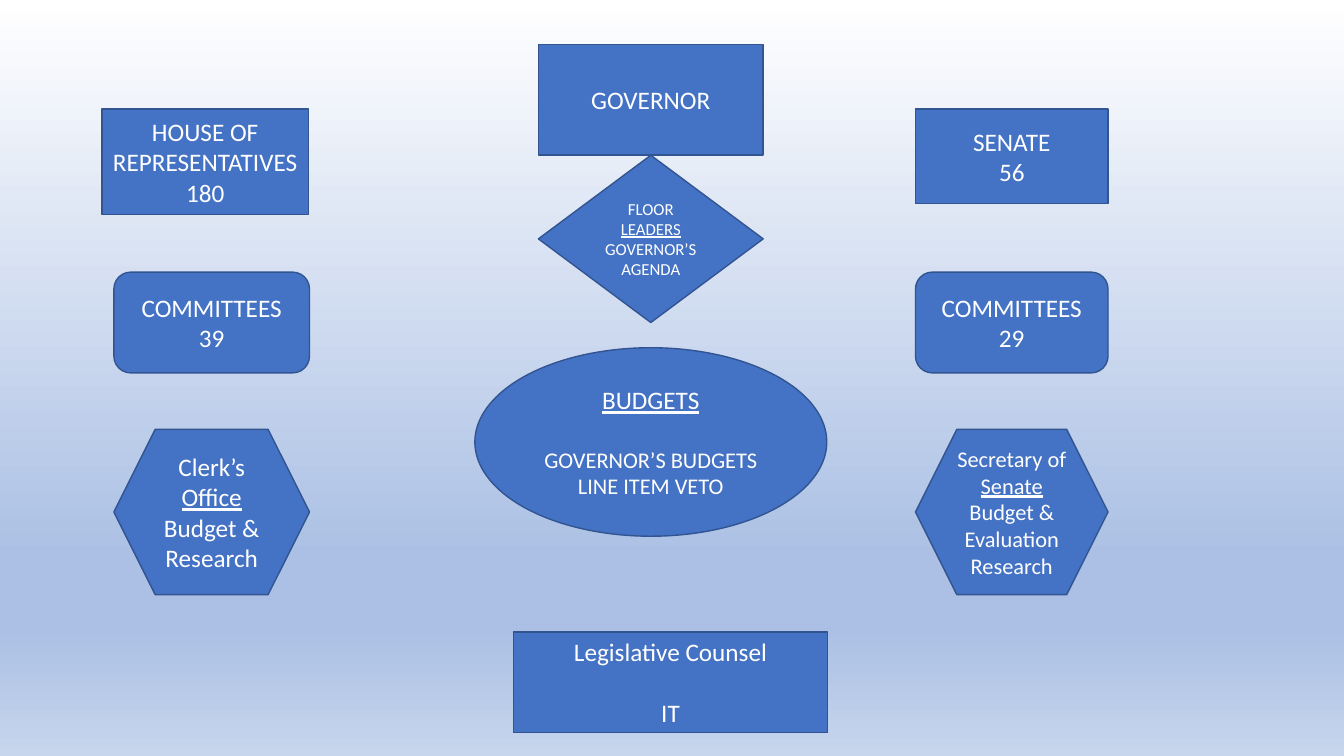
from lxml import etree
from pptx import Presentation
from pptx.dml.color import RGBColor
from pptx.enum.shapes import MSO_SHAPE
from pptx.enum.text import MSO_ANCHOR, PP_ALIGN
from pptx.oxml.ns import qn
from pptx.util import Inches, Pt

RECT = MSO_SHAPE.RECTANGLE
ROUNDED = MSO_SHAPE.ROUNDED_RECTANGLE
HEXAGON = MSO_SHAPE.HEXAGON
DIAMOND = MSO_SHAPE.DIAMOND
OVAL = MSO_SHAPE.OVAL
MIDDLE = MSO_ANCHOR.MIDDLE
CENTER = PP_ALIGN.CENTER

WHITE = RGBColor(0xFF, 0xFF, 0xFF)
BLUE = RGBColor(0x44, 0x72, 0xC4)
DARK_BLUE = RGBColor(0x32, 0x54, 0x91)
PALE_BLUE = RGBColor(0xAB, 0xC0, 0xE4)
LIGHT_BLUE = RGBColor(0xC7, 0xD5, 0xED)

FONT = "Calibri"
BLANK_LAYOUT = 6
LINE_GAP = 22
BACKGROUND_STOPS = [(0, WHITE), (74, PALE_BLUE), (83, PALE_BLUE), (100, LIGHT_BLUE)]


def set_background(s):
    fill = s.background.fill
    fill.gradient()
    fill.gradient_angle = 270
    stops = next(s.element.iter(qn("a:gsLst")))
    for stop in list(stops):
        stops.remove(stop)
    for percent, color in BACKGROUND_STOPS:
        stop = etree.SubElement(stops, qn("a:gs"), pos=str(percent * 1000))
        etree.SubElement(stop, qn("a:srgbClr"), val=str(color))


def add_run(p, text, size, underline=False):
    r = p.add_run()
    r.text = text
    r.font.name = FONT
    r.font.size = Pt(size)
    r.font.color.rgb = WHITE
    if underline:
        r.font.underline = True


def add_box(s, kind, left, top, width, height):
    sp = s.shapes.add_shape(kind, Inches(left), Inches(top), Inches(width), Inches(height))
    sp.shadow.inherit = False
    sp.fill.solid()
    sp.fill.fore_color.rgb = BLUE
    sp.line.color.rgb = DARK_BLUE
    sp.line.width = Pt(1)
    sp.text_frame.word_wrap = True
    sp.text_frame.vertical_anchor = MIDDLE
    return sp


def add_paragraph(sp, plain, underlined="", size=18, gap=0):
    tf = sp.text_frame
    p = tf.add_paragraph() if tf.text else tf.paragraphs[0]
    p.alignment = CENTER
    if gap:
        p.space_before = Pt(gap)
    if plain:
        add_run(p, plain, size)
    if underlined:
        add_run(p, underlined, size, True)


def add_count(s, kind, box, name, count):
    sp = add_box(s, kind, *box)
    add_paragraph(sp, name)
    add_paragraph(sp, count)


def add_office(s, kind, box, title, underlined, duties, size):
    sp = add_box(s, kind, *box)
    add_paragraph(sp, title, underlined, size)
    for duty in duties:
        add_paragraph(sp, duty, size=size)


def main():
    prs = Presentation()
    prs.slide_width, prs.slide_height = Inches(13.33), Inches(7.5)
    s = prs.slides.add_slide(prs.slide_layouts[BLANK_LAYOUT])
    set_background(s)

    governor = add_box(s, RECT, 5.34, 0.44, 2.23, 1.1)
    add_paragraph(governor, "GOVERNOR")

    add_count(s, RECT, (1.01, 1.08, 2.05, 1.05), "HOUSE OF REPRESENTATIVES", "180")
    add_count(s, RECT, (9.08, 1.08, 1.91, 0.94), "SENATE", "56")

    budgets = add_box(s, OVAL, 4.71, 3.45, 3.49, 1.87)
    add_paragraph(budgets, "", "BUDGETS")
    add_paragraph(budgets, "GOVERNOR’S BUDGETS LINE ITEM VETO", size=16, gap=LINE_GAP)

    add_office(s, DIAMOND, (5.34, 1.54, 2.23, 1.66),
               "FLOOR ", "LEADERS", ["GOVERNOR’S AGENDA"], 12)

    add_count(s, ROUNDED, (1.13, 2.7, 1.94, 1), "COMMITTEES", "39")
    add_count(s, ROUNDED, (9.08, 2.7, 1.91, 1), "COMMITTEES", "29")

    add_office(s, HEXAGON, (1.13, 4.26, 1.94, 1.64),
               "Clerk’s ", "Office", ["Budget & Research"], 18)
    add_office(s, HEXAGON, (9.08, 4.26, 1.91, 1.64),
               "Secretary of ", "Senate", ["Budget & Evaluation", "Research"], 16)

    counsel = add_box(s, RECT, 5.09, 6.27, 3.12, 1)
    add_paragraph(counsel, "Legislative Counsel")
    add_paragraph(counsel, "IT", gap=LINE_GAP)

    prs.save("out.pptx")


if __name__ == "__main__":
    main()
